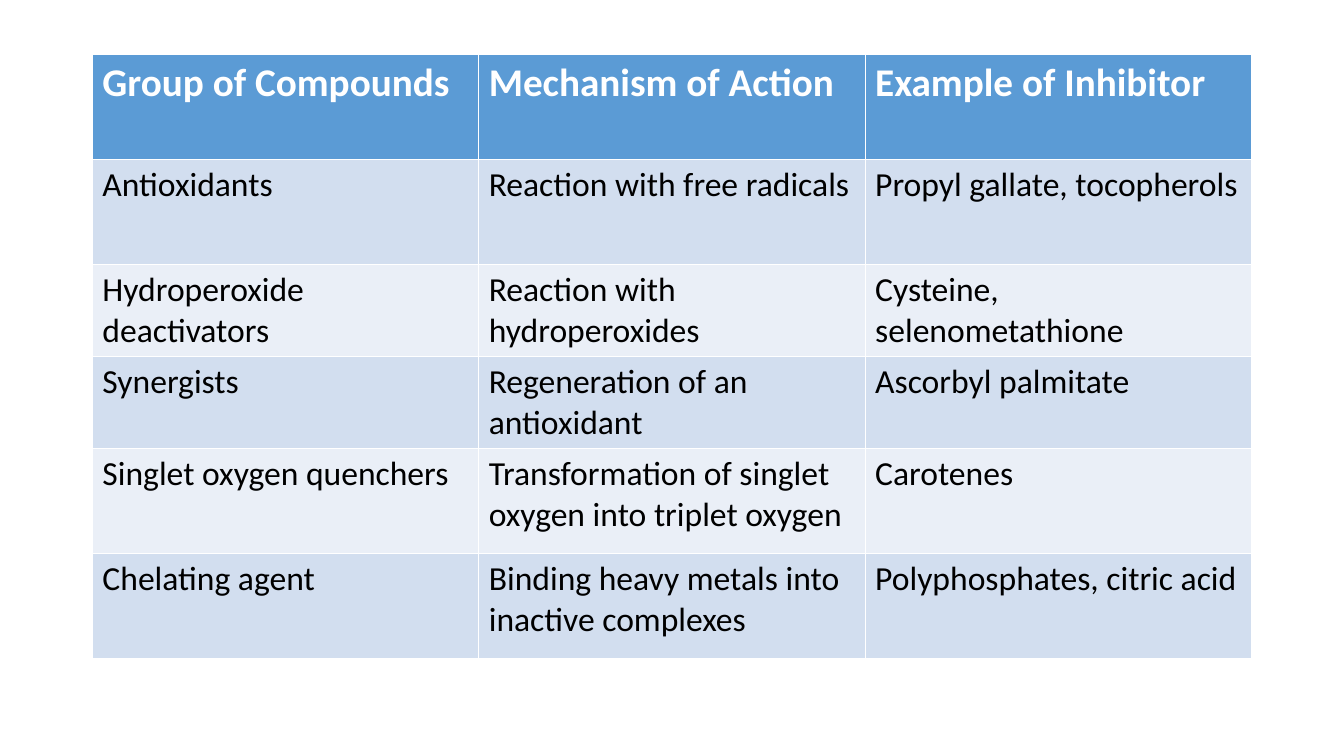
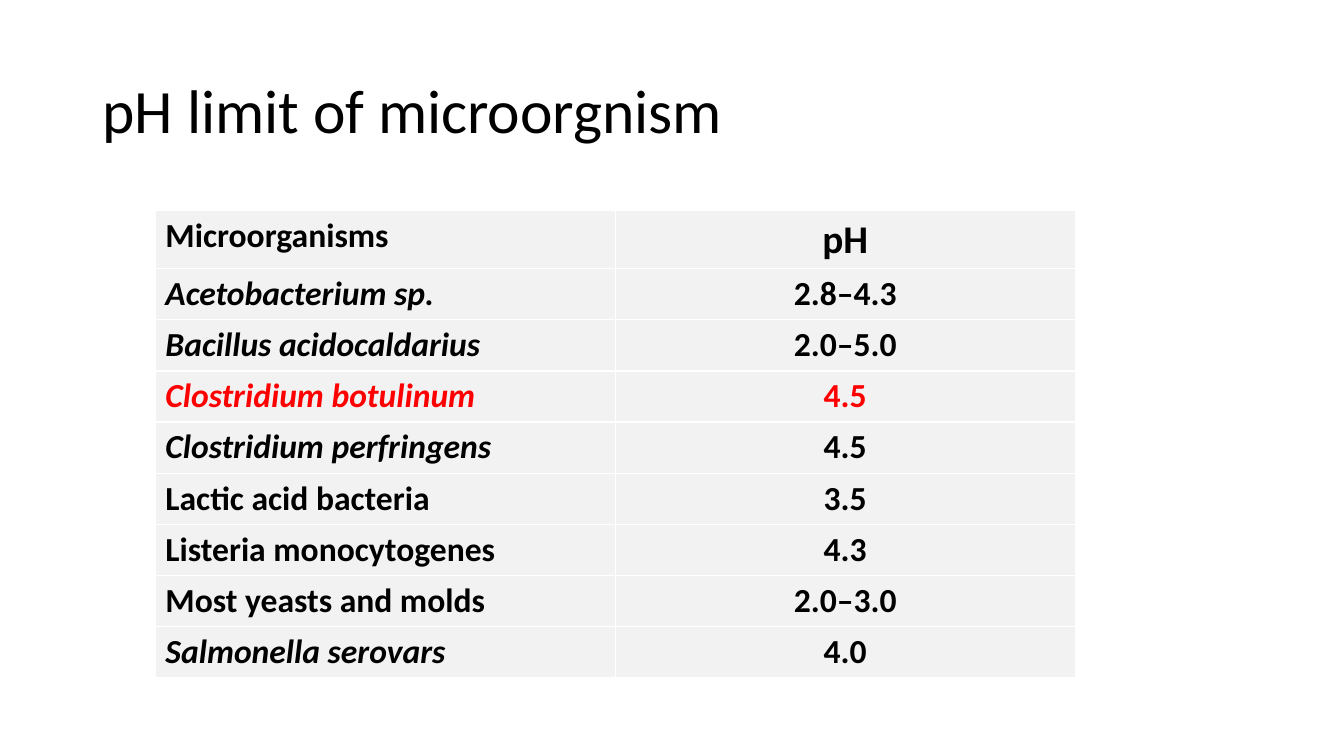
from pptx import Presentation
from pptx import util as u
from pptx.dml import color
from pptx.enum import text

Pt = u.Pt
BLACK, WHITE, RED = "000000", "FFFFFF", "FF0000"
BLUE, BLUE_BAND, PALE_BAND, GREY = "5B9BD5", "D2DEEF", "EAEFF7", "F2F2F2"
TITLE_ONLY, BLANK = 5, 6

COMPOUNDS = [
    ("Group of Compounds", "Mechanism of Action", "Example of Inhibitor"),
    ("Antioxidants", "Reaction with free radicals", "Propyl gallate, tocopherols"),
    ("Hydroperoxide deactivators", "Reaction with hydroperoxides", "Cysteine, selenometathione"),
    ("Synergists", "Regeneration of an antioxidant", "Ascorbyl palmitate"),
    ("Singlet oxygen quenchers", "Transformation of singlet oxygen into triplet oxygen", "Carotenes"),
    ("Chelating agent", "Binding heavy metals into inactive complexes", "Polyphosphates, citric acid"),
]

PH_LIMITS = [
    ("Acetobacterium sp.", "2.8–4.3"),
    ("Bacillus acidocaldarius", "2.0–5.0"),
    ("Clostridium botulinum", "4.5"),
    ("Clostridium perfringens", "4.5"),
    ("Lactic acid bacteria", "3.5"),
    ("Listeria monocytogenes", "4.3"),
    ("Most yeasts and molds", "2.0–3.0"),
    ("Salmonella serovars", "4.0"),
]
ITALIC_NAMES = {
    "Acetobacterium sp.",
    "Bacillus acidocaldarius",
    "Clostridium botulinum",
    "Clostridium perfringens",
    "Salmonella serovars",
}
HIGHLIGHT = "Clostridium botulinum"


def rgb(value):
    return color.RGBColor.from_string(value)


class Deck:
    font = "Calibri"
    title_size, header_size, body_size = 44, 28, 24

    def __init__(self):
        self.presentation = Presentation()
        self.presentation.slide_width = Pt(960)
        self.presentation.slide_height = Pt(540)
        self.slide = None

    def add_slide(self, layout):
        layouts = self.presentation.slide_layouts
        self.slide = self.presentation.slides.add_slide(layouts[layout])

    def add_run(self, paragraph, words, size, ink=BLACK, bold=False, italic=False):
        run = paragraph.add_run()
        run.text = words
        run.font.name = self.font
        run.font.size = Pt(size)
        run.font.bold = bold
        run.font.italic = italic
        run.font.color.rgb = rgb(ink)

    def title(self, words):
        shape = self.slide.shapes.title
        shape.left, shape.top, shape.width, shape.height = Pt(66), Pt(29), Pt(828), Pt(104)
        shape.text_frame.vertical_anchor = text.MSO_ANCHOR.MIDDLE
        paragraph = shape.text_frame.paragraphs[0]
        paragraph.alignment = text.PP_ALIGN.LEFT
        paragraph.line_spacing = 0.9
        self.add_run(paragraph, words, self.title_size)

    def table(self, left, top, column_width, heights, columns):
        shape = self.slide.shapes.add_table(
            len(heights), columns, Pt(left), Pt(top), Pt(column_width * columns), Pt(sum(heights)))
        for column in shape.table.columns:
            column.width = Pt(column_width)
        for row, height in zip(shape.table.rows, heights):
            row.height = Pt(height)
        return shape.table

    def cell(self, cell, words, fill, size=body_size, centred=False, **style):
        cell.fill.solid()
        cell.fill.fore_color.rgb = rgb(fill)
        paragraph = cell.text_frame.paragraphs[0]
        if centred:
            paragraph.alignment = text.PP_ALIGN.CENTER
        self.add_run(paragraph, words, size, **style)


def compounds_slide(deck):
    deck.add_slide(BLANK)
    table = deck.table(66, 39, 276, [75, 75, 65, 65, 75, 75], 3)
    for row, values in enumerate(COMPOUNDS):
        for column, words in enumerate(values):
            cell = table.cell(row, column)
            if row == 0:
                deck.cell(cell, words, BLUE, deck.header_size, ink=WHITE, bold=True)
            else:
                deck.cell(cell, words, BLUE_BAND if row % 2 else PALE_BAND)


def ph_slide(deck):
    deck.add_slide(TITLE_ONLY)
    deck.title("pH limit of microorgnism")
    table = deck.table(111, 150.5, 328.5, [40] + [36.5] * len(PH_LIMITS), 2)
    deck.cell(table.cell(0, 0), "Microorganisms", GREY, bold=True)
    deck.cell(table.cell(0, 1), "pH", GREY, deck.header_size, centred=True, bold=True)
    for row, (name, limit) in enumerate(PH_LIMITS, 1):
        ink = RED if name == HIGHLIGHT else BLACK
        deck.cell(table.cell(row, 0), name, GREY, ink=ink, bold=True, italic=name in ITALIC_NAMES)
        deck.cell(table.cell(row, 1), limit, GREY, centred=True, ink=ink, bold=True)


def main():
    deck = Deck()
    compounds_slide(deck)
    ph_slide(deck)
    deck.presentation.save("out.pptx")


if __name__ == "__main__":
    main()
